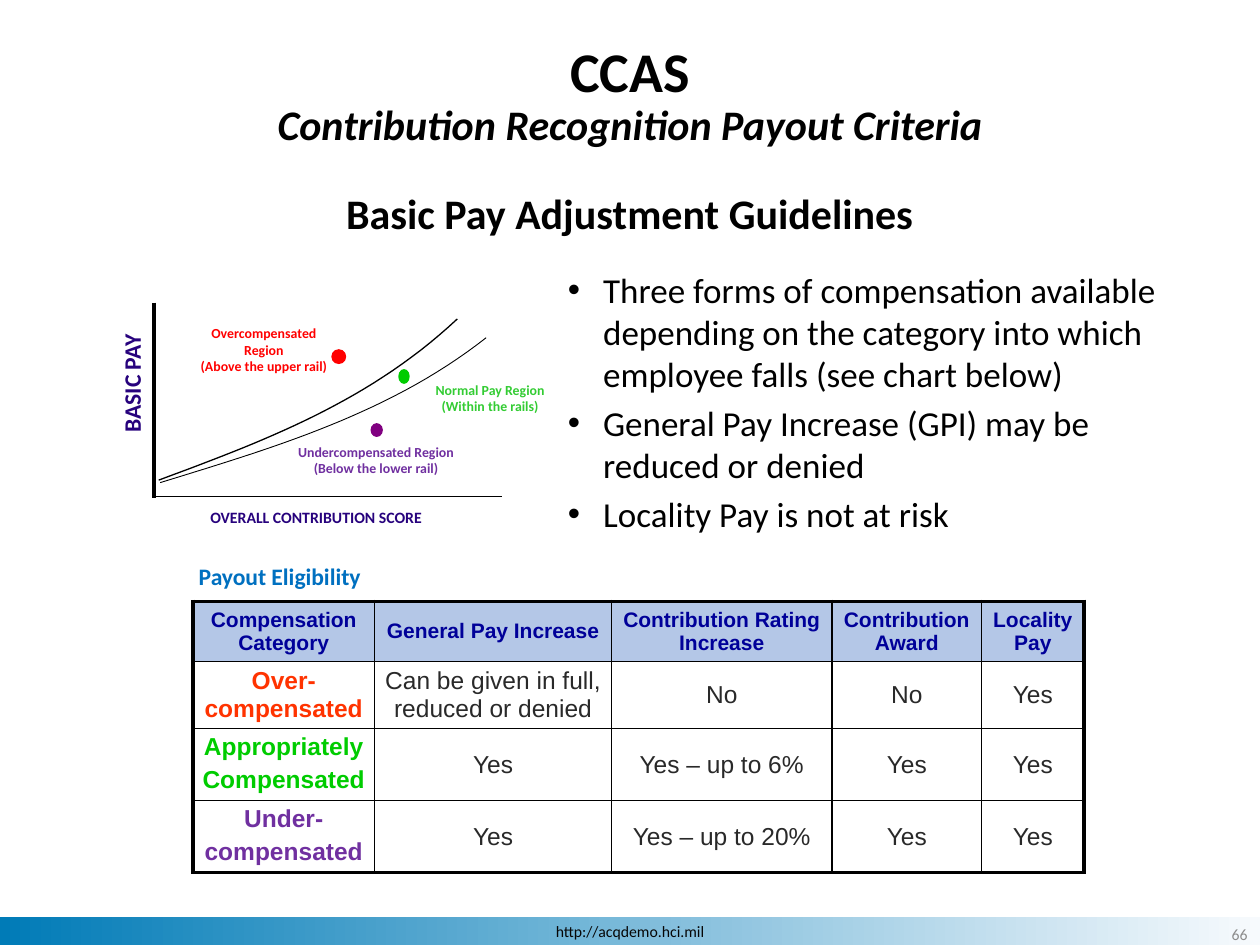
"""Build the slide on basic pay adjustment guidelines."""
from dataclasses import dataclass
from typing import Optional

from lxml.etree import SubElement
from pptx import Presentation
from pptx.dml.color import RGBColor
from pptx.enum.shapes import MSO_CONNECTOR as Link, MSO_SHAPE as Kind
from pptx.enum.text import MSO_ANCHOR as Anchor, MSO_AUTO_SIZE as Fit, PP_ALIGN as Align
from pptx.oxml.ns import qn
from pptx.util import Cm, Pt

BLACK = RGBColor(0x00, 0x00, 0x00)
INK = RGBColor(0x06, 0x06, 0x06)
CHAR = RGBColor(0x29, 0x29, 0x29)
GREY = RGBColor(0x8C, 0x8C, 0x8C)
PALE = RGBColor(0xF7, 0xFA, 0xFD)
BLUE = RGBColor(0x00, 0x7B, 0xB7)
SKY = RGBColor(0x00, 0x70, 0xC0)
NAVY = RGBColor(0x00, 0x00, 0x99)
INDIGO = RGBColor(0x27, 0x02, 0x7D)
HEAD = RGBColor(0xB4, 0xC7, 0xE7)
RED = RGBColor(0xFF, 0x00, 0x00)
ORANGE = RGBColor(0xFF, 0x33, 0x00)
GREEN = RGBColor(0x00, 0xCC, 0x00)
LIME = RGBColor(0x33, 0xCC, 0x33)
PLUM = RGBColor(0x80, 0x00, 0x80)
PURPLE = RGBColor(0x70, 0x30, 0xA0)

Box = tuple[float, float, float, float]
Point = tuple[float, float]


@dataclass
class Label:
    box: Box
    lines: tuple[str, ...]
    size: float
    color: RGBColor
    bold: bool = True
    align: Align = Align.CENTER
    anchor: Anchor = Anchor.TOP
    inset: Optional[Point] = None
    wrap: bool = True
    turn: bool = False


@dataclass
class Dot:
    box: Box
    color: RGBColor


@dataclass
class Axis:
    start: Point
    end: Point
    width: float


@dataclass
class Rail:
    points: tuple[Point, Point, Point, Point]
    width: float


@dataclass
class Row:
    height: float
    name: tuple[str, ...]
    color: RGBColor
    cells: tuple[str, ...]


TINY = (0.2, 0.1)
AXES = (Axis((3.1, 6.1), (3.1, 10.03), 0), Axis((3.07, 10.01), (10.11, 10.01), 1))
RAILS = (
    Rail(((3.2, 9.68), (5.33, 8.89), (7.44, 8.1), (9.22, 6.43)), 0.75),
    Rail(((3.23, 9.73), (5.54, 9.02), (7.87, 8.33), (9.8, 6.81)), 0.5),
)
DOTS = (
    Dot((6.68, 7.04, 0.3, 0.3), RED),
    Dot((7.47, 8.53, 0.25, 0.28), PLUM),
    Dot((8.03, 7.44, 0.23, 0.3), GREEN),
)
MARKS = (
    Label((3.35, 6.45, 3.94, 1.47), ("Overcompensated", "Region", "(Above the upper rail)"),
          7.9, RED, inset=TINY),
    Label((2.24, 6.71, 1.09, 2.26), ("BASIC PAY",), 13.5, INDIGO,
          align=Align.LEFT, wrap=False, turn=True),
    Label((3.99, 10.11, 5.33, 0.79), ("OVERALL CONTRIBUTION SCORE",), 9, INDIGO,
          align=Align.LEFT, wrap=False),
    Label((4.8, 8.84, 5.56, 1.19), ("Undercompensated Region", "(Below the lower rail)"),
          7.9, PURPLE, inset=TINY),
    Label((8.05, 7.59, 3.66, 1.07), ("Normal Pay Region", "(Within the rails)"),
          7.9, LIME, inset=TINY),
)
NOTES = (
    Label((6.22, 3.66, 12.95, 1.27), ("Basic Pay Adjustment Guidelines",), 24, BLACK),
    Label((2.92, 11.2, 5.44, 0.84), ("Payout Eligibility",), 13.5, SKY),
    Label((21.11, 18.62, 4.29, 0.43), ("66",), 9, GREY, bold=False,
          align=Align.RIGHT, anchor=Anchor.MIDDLE),
)
POINTS = (
    "Three forms of compensation available depending on the category into which "
    "employee falls (see chart below)",
    "General Pay Increase (GPI) may be reduced or denied",
    "Locality Pay is not at risk",
)
COLS = (3.66, 4.78, 4.44, 3.02, 2.06)
ROWS = (
    Row(1.22, ("Compensation Category",), NAVY,
        ("General Pay Increase", "Contribution Rating Increase", "Contribution Award",
         "Locality Pay")),
    Row(1.35, ("Over-compensated",), ORANGE,
        ("Can be given in full, reduced or denied", "No", "No", "Yes")),
    Row(1.45, ("Appropriately", "Compensated"), GREEN, ("Yes", "Yes – up to 6%", "Yes", "Yes")),
    Row(1.45, ("Under-", "compensated"), PURPLE, ("Yes", "Yes – up to 20%", "Yes", "Yes")),
)


def place(box: Box) -> list[Cm]:
    return [Cm(n) for n in box]


def write(para, text: str, size: float, color: RGBColor, bold=False, face="Calibri", slant=False):
    run = para.add_run()
    run.text = text
    font = run.font
    font.name, font.size, font.bold, font.italic = face, Pt(size), bold, slant
    font.color.rgb = color


def fill_text(frame, lines, size, color, bold, align=Align.CENTER, face="Calibri", gap=0.0):
    for i, line in enumerate(lines):
        para = frame.add_paragraph() if i else frame.paragraphs[0]
        para.alignment = align
        if i and gap:
            para.space_before = Pt(gap)
        write(para, line, size, color, bold, face)


def add_label(shapes, label: Label):
    frame = shapes.add_textbox(*place(label.box)).text_frame
    frame.word_wrap = label.wrap
    frame.vertical_anchor = label.anchor
    if label.inset:
        frame.margin_left = frame.margin_right = Cm(label.inset[0])
        frame.margin_top = frame.margin_bottom = Cm(label.inset[1])
    if label.turn:
        frame._txBody.bodyPr.set("vert", "vert270")
    fill_text(frame, label.lines, label.size, label.color, label.bold, label.align)


def add_axis(shapes, axis: Axis):
    line = shapes.add_connector(Link.STRAIGHT, *place(axis.start + axis.end))
    line.line.color.rgb = BLACK
    line.line.width = Pt(axis.width)
    SubElement(line._element.spPr, qn("a:effectLst"))


def add_rail(shapes, rail: Rail, steps: int = 30):
    def spot(t: float) -> tuple[int, int]:
        parts = ((1 - t) ** 3, 3 * t * (1 - t) ** 2, 3 * t * t * (1 - t), t ** 3)
        x, y = (sum(w * p[k] for w, p in zip(parts, rail.points)) for k in (0, 1))
        return Cm(x), Cm(y)

    path = shapes.build_freeform(*spot(0))
    path.add_line_segments([spot(i / steps) for i in range(1, steps + 1)], close=False)
    curve = path.convert_to_shape()
    curve.shadow.inherit = False
    curve.fill.background()
    curve.line.color.rgb = BLACK
    curve.line.width = Pt(rail.width)


def add_dot(shapes, dot: Dot):
    oval = shapes.add_shape(Kind.OVAL, *place(dot.box))
    oval.shadow.inherit = False
    oval.fill.solid()
    oval.fill.fore_color.rgb = dot.color
    oval.line.fill.background()


def add_bar(shapes):
    bar = shapes.add_shape(Kind.RECTANGLE, *place((0, 18.49, 25.4, 0.56)))
    bar.shadow.inherit = False
    bar.line.fill.background()
    bar.fill.gradient()
    bar.fill.gradient_angle = 180
    for stop, color in zip(bar.fill.gradient_stops, (PALE, BLUE)):
        stop.color.rgb = color
    bar.text_frame.vertical_anchor = Anchor.MIDDLE
    fill_text(bar.text_frame, ("http://acqdemo.hci.mil",), 9, INK, False)


def set_title(title):
    title.left, title.top, title.width, title.height = place((0, 0.76, 25.4, 2.49))
    frame = title.text_frame
    frame.auto_size = Fit.NONE
    frame.vertical_anchor = Anchor.TOP
    para = frame.paragraphs[0]
    para.alignment, para.line_spacing = Align.CENTER, 0.9
    write(para, "CCAS", 32, BLACK, True)
    para.add_line_break()
    write(para, "Contribution Recognition Payout Criteria", 24, BLACK, True, slant=True)


def add_points(shapes):
    frame = shapes.add_textbox(*place((11.2, 5.28, 12.37, 6.53))).text_frame
    frame.word_wrap = True
    fill_text(frame, POINTS, 20, BLACK, False, Align.LEFT, gap=4)
    for para in frame.paragraphs:
        props = para._p.get_or_add_pPr()
        props.set("marL", str(Cm(0.71)))
        props.set("indent", str(-Cm(0.71)))
        SubElement(props, qn("a:buFont"), typeface="Arial")
        SubElement(props, qn("a:buChar"), char="•")


def add_edge(cell, side: str, width: float):
    edge = SubElement(cell._tc.get_or_add_tcPr(), qn(f"a:ln{side}"), w=str(Pt(width)))
    SubElement(SubElement(edge, qn("a:solidFill")), qn("a:srgbClr"), val=str(BLACK))


def add_grid(shapes):
    box = place((3.89, 12.12, sum(COLS), sum(row.height for row in ROWS)))
    table = shapes.add_table(len(ROWS), len(COLS), *box).table
    table.first_row = table.horz_banding = False
    for col, width in zip(table.columns, COLS):
        col.width = Cm(width)
    for r, row in enumerate(ROWS):
        table.rows[r].height = Cm(row.height)
        for c, lines in enumerate((row.name, *((text,) for text in row.cells))):
            cell = table.cell(r, c)
            bold = r == 0 or c == 0
            outer = {"L": c == 0, "R": c == len(COLS) - 1, "T": r == 0, "B": r == len(ROWS) - 1}
            for side, thick in outer.items():
                add_edge(cell, side, 2.25 if thick else 1)
            cell.margin_left = cell.margin_right = Cm(0.18)
            cell.margin_top = cell.margin_bottom = Cm(0.1)
            cell.vertical_anchor = Anchor.TOP if len(lines) > 1 else Anchor.MIDDLE
            if r:
                cell.fill.background()
            else:
                cell.fill.solid()
                cell.fill.fore_color.rgb = HEAD
            fill_text(cell.text_frame, lines, 14 if r else 12, row.color if bold else CHAR,
                      bold, face="Arial", gap=2.8)


def main():
    deck = Presentation()
    deck.slide_width, deck.slide_height = Cm(25.4), Cm(19.05)
    shapes = deck.slides.add_slide(deck.slide_layouts[5]).shapes
    set_title(shapes.title)
    add_bar(shapes)
    add_grid(shapes)
    add_points(shapes)
    chart = shapes.add_group_shape().shapes
    for draw, items in ((add_axis, AXES), (add_rail, RAILS), (add_dot, DOTS), (add_label, MARKS)):
        for item in items:
            draw(chart, item)
    for note in NOTES:
        add_label(shapes, note)
    deck.save("out.pptx")


if __name__ == "__main__":
    main()
